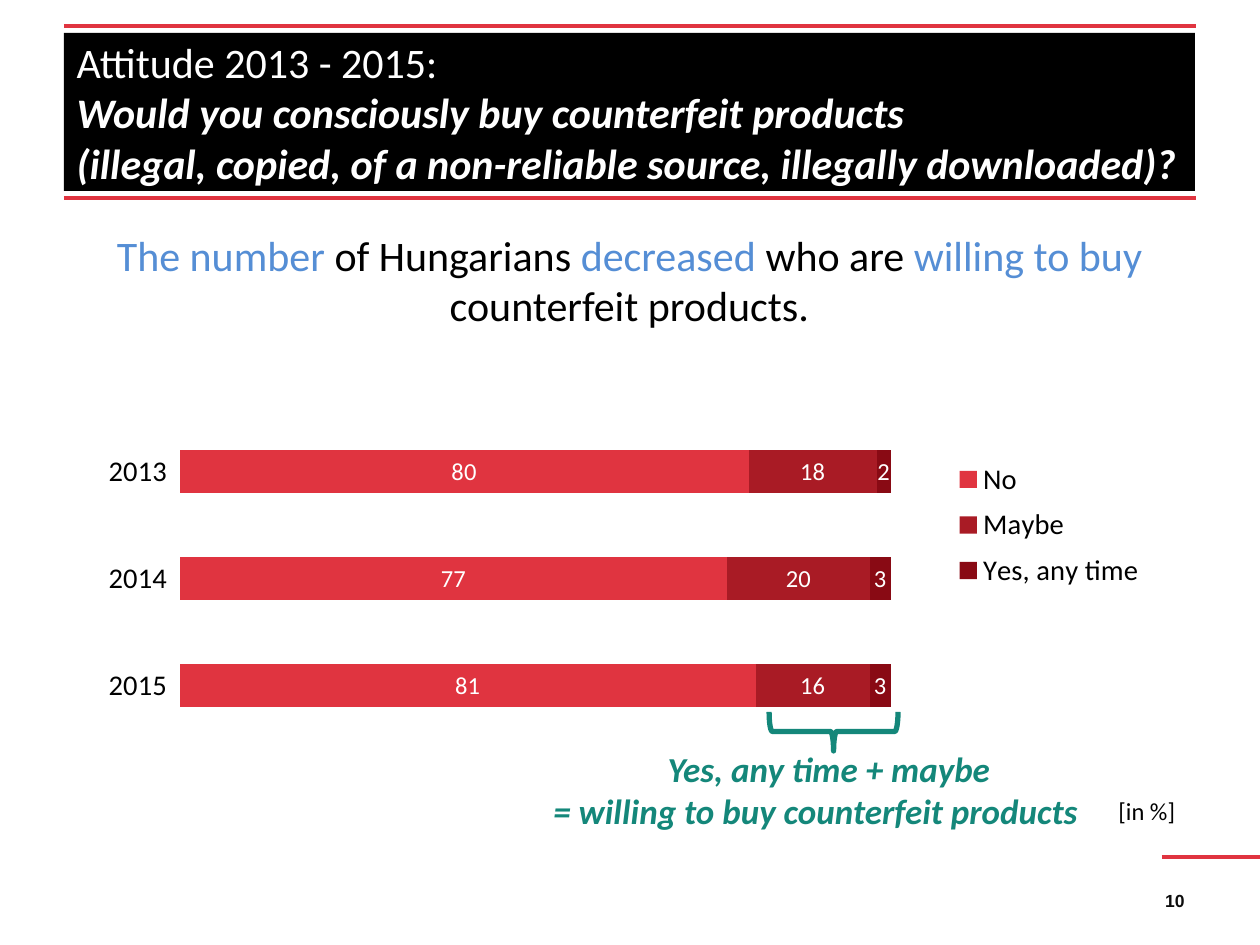
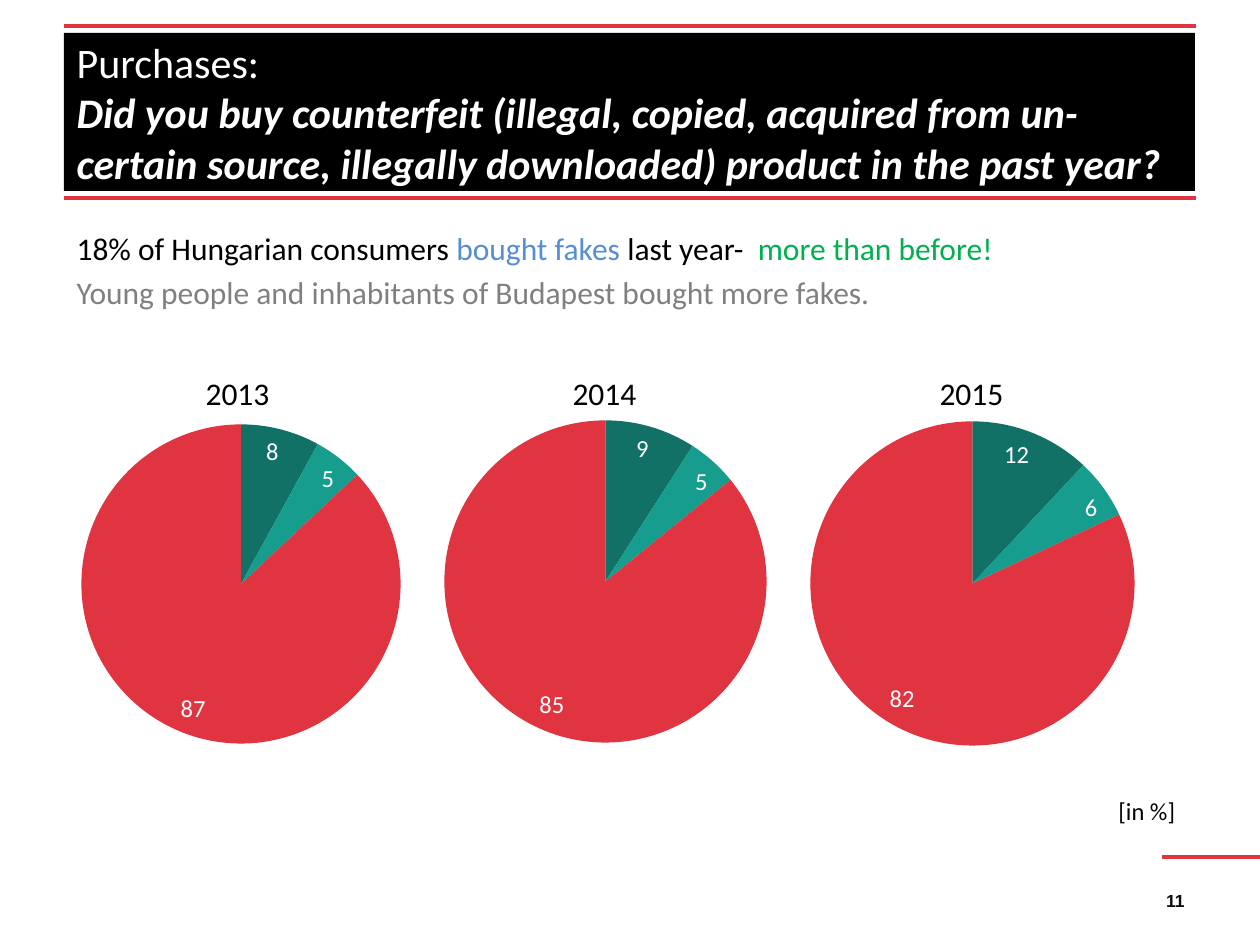
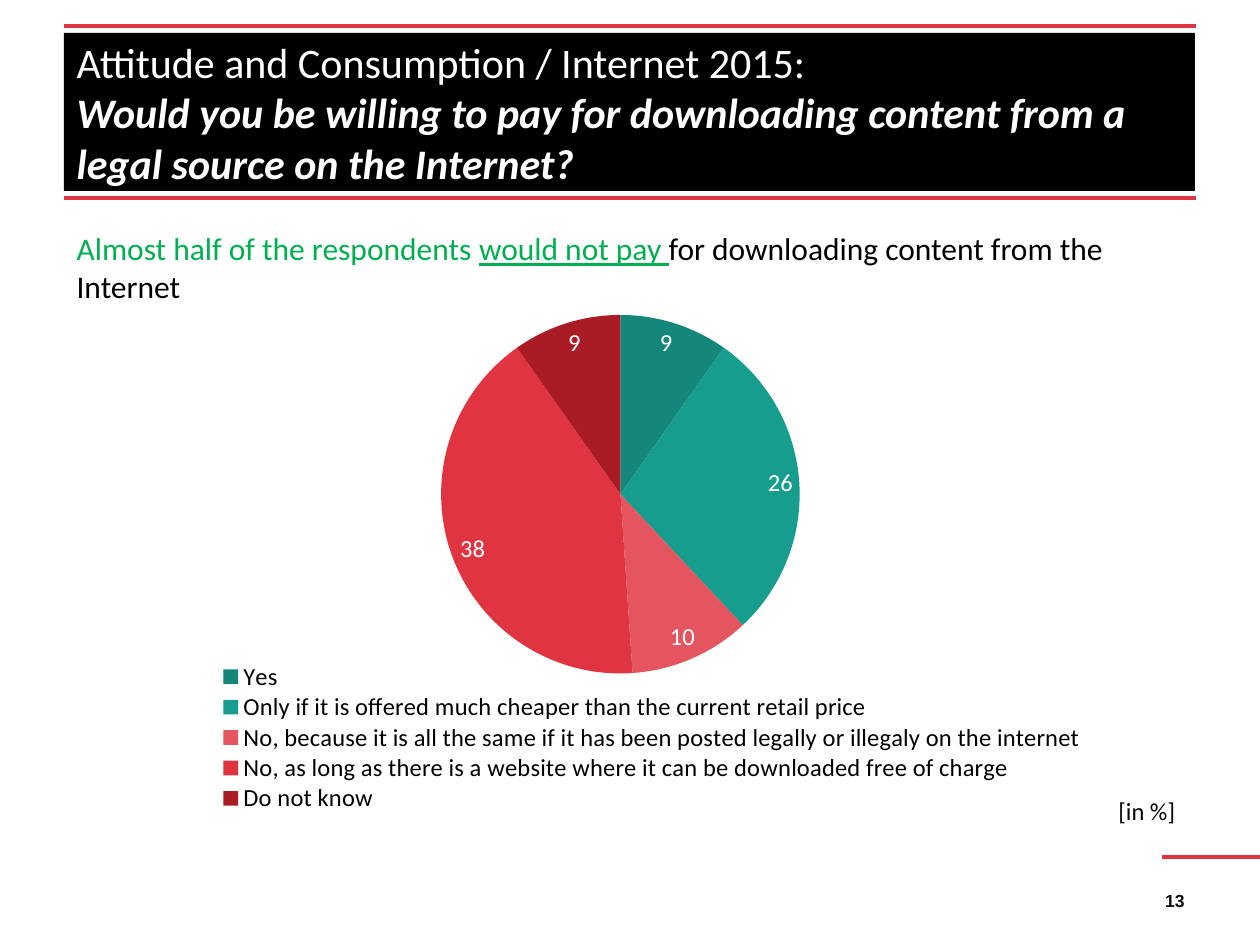
import copy
import lxml.etree
import pptx
import pptx.chart.data
import pptx.dml.color
import pptx.enum.chart
import pptx.enum.shapes
import pptx.enum.text
import pptx.oxml.ns
import pptx.util

SCALE = 914400 / 126
RED, DARK_RED, DEEP_RED, PINK = "E03440", "A91B25", "890A14", "E5555F"
TEAL, LIGHT_TEAL, DEEP_TEAL = "14877A", "179D8D", "117166"
BLACK, WHITE, INK, GREY = "000000", "FFFFFF", "0D0D0D", "808080"
BLUE, GREEN = "558ED5", "00B050"

ALIGN = pptx.enum.text.PP_ALIGN
ANCHOR = pptx.enum.text.MSO_ANCHOR
CHART = pptx.enum.chart.XL_CHART_TYPE
LABEL = pptx.enum.chart.XL_LABEL_POSITION
qn = pptx.oxml.ns.qn


def px(*values):
    return [pptx.util.Emu(round(v * SCALE)) for v in values]


def rgb(value):
    return pptx.dml.color.RGBColor.from_string(value)


def add_text(p, text, size=18, color=BLACK, font="Calibri", bold=False, italic=False, underline=False):
    for i, line in enumerate(text.split("\n")):
        if i:
            p.add_line_break()
            p._p[-1].append(copy.deepcopy(r._r.rPr))
        if not line:
            continue
        r = p.add_run()
        r.text = line
        r.font.name = font
        r.font.size = pptx.util.Pt(size)
        r.font.bold = bold
        r.font.italic = italic
        r.font.underline = underline
        r.font.color.rgb = rgb(color)


def set_layout(parent, index, box):
    old = parent.find(qn("c:layout"))
    if old is not None:
        parent.remove(old)
    layout = lxml.etree.Element(qn("c:layout"))
    manual = lxml.etree.SubElement(layout, qn("c:manualLayout"))
    items = [("xMode", "edge"), ("yMode", "edge"), *zip("xywh", box)]
    if parent.tag == qn("c:plotArea"):
        items.insert(0, ("layoutTarget", "inner"))
    for tag, value in items:
        lxml.etree.SubElement(manual, qn("c:" + tag)).set("val", str(value))
    parent.insert(index, layout)


class Deck:
    def __init__(self):
        self.prs = pptx.Presentation()
        self.prs.slide_width, self.prs.slide_height = px(1260, 945)
        self.s = None

    def new_slide(self, number, lead, question):
        self.s = self.prs.slides.add_slide(self.prs.slide_layouts[1])
        self.line(64, 26, 1196, 26, 2.25)
        self.line(64, 198, 1196, 198, 2.25)
        self.line(1162, 857, 1260, 857, 1.75)
        self.text((903, 876, 294, 50), str(number), align=ALIGN.RIGHT, anchor=ANCHOR.MIDDLE,
                  size=10, color=INK, font="Arial", bold=True)
        self.text((1106, 790, 120, 42), "[in %]", size=14)
        sp = self.s.shapes.title
        sp.fill.solid()
        sp.fill.fore_color.rgb = rgb(BLACK)
        p = self.frame(sp, (64, 33, 1131, 158), ANCHOR.MIDDLE).paragraphs[0]
        p.alignment = ALIGN.LEFT
        add_text(p, lead + "\n", size=24, color=WHITE)
        p.add_line_break()
        p._p[-1].append(copy.deepcopy(p.runs[0]._r.rPr))
        p._p.remove(p._p[-1])
        add_text(p, question, size=24, color=WHITE, bold=True, italic=True)

    def frame(self, sp, box, anchor):
        sp.left, sp.top, sp.width, sp.height = px(*box)
        tf = sp.text_frame
        tf.word_wrap = True
        tf.auto_size = pptx.enum.text.MSO_AUTO_SIZE.NONE
        tf.vertical_anchor = anchor
        return tf

    def body(self, height, paragraphs, size=18, align=ALIGN.LEFT):
        tf = self.frame(self.s.placeholders[1], (64, 223, 1131, height), ANCHOR.TOP)
        for i, runs in enumerate(paragraphs):
            p = tf.add_paragraph() if i else tf.paragraphs[0]
            pPr = p._p.get_or_add_pPr()
            pPr.set("marL", "0")
            pPr.set("indent", "0")
            lxml.etree.SubElement(pPr, qn("a:buNone"))
            p.alignment = align
            p.space_before = pptx.util.Pt(size * 0.2 if i else 0)
            for text, color, *underline in runs:
                add_text(p, text, size=size, color=color, underline=bool(underline))

    def text(self, box, *lines, align=ALIGN.LEFT, anchor=ANCHOR.TOP, **fmt):
        tf = self.frame(self.s.shapes.add_textbox(*px(*box)), box, anchor)
        for i, line in enumerate(lines):
            p = tf.add_paragraph() if i else tf.paragraphs[0]
            p.alignment = ALIGN.LEFT if i else align
            add_text(p, line, **fmt)

    def line(self, x1, y1, x2, y2, width):
        kind = pptx.enum.shapes.MSO_CONNECTOR.STRAIGHT
        sp = self.s.shapes.add_connector(kind, *px(x1, y1, x2, y2))
        sp.line.color.rgb = rgb(RED)
        sp.line.width = pptx.util.Pt(width)
        lxml.etree.SubElement(sp._element.spPr, qn("a:effectLst"))

    def brace(self, box):
        sp = self.s.shapes.add_shape(pptx.enum.shapes.MSO_SHAPE.RIGHT_BRACE, *px(*box))
        sp.rotation = 90
        sp.shadow.inherit = False
        sp.fill.background()
        sp.line.color.rgb = rgb(TEAL)
        sp.line.width = pptx.util.Pt(3)

    def chart(self, kind, box, cats, series, size=18, plot=None, legend=None, legend_size=None):
        data = pptx.chart.data.CategoryChartData()
        data.categories = cats
        for name, values in series:
            data.add_series(name, values)
        chart = self.s.shapes.add_chart(kind, *px(*box), data).chart
        chart.has_title = False
        chart.font.name = "Calibri"
        chart.font.size = pptx.util.Pt(size)
        chart.font.color.rgb = rgb(BLACK)
        chart.has_legend = legend is not None
        if legend:
            chart.legend.position = pptx.enum.chart.XL_LEGEND_POSITION.RIGHT
            chart.legend.include_in_layout = False
            chart.legend.font.size = pptx.util.Pt(legend_size or size)
            set_layout(chart.legend._element, 1, legend)
        if plot:
            set_layout(chart._chartSpace.find(".//" + qn("c:plotArea")), 0, plot)
        return chart

    def labels(self, series, position=None):
        labels = series.data_labels
        labels.show_value = True
        labels.font.size = pptx.util.Pt(14)
        labels.font.color.rgb = rgb(WHITE)
        if position is not None:
            labels.position = position

    def pie(self, box, cats, values, colors, position, **options):
        chart = self.chart(CHART.PIE, box, cats, [("Series 1", values)], **options)
        chart.plots[0].vary_by_categories = True
        series = chart.plots[0].series[0]
        for i, color in enumerate(colors):
            fill = series.points[i].format.fill
            fill.solid()
            fill.fore_color.rgb = rgb(color)
        self.labels(series, position)

    def stacked_bars(self, box, cats, series, colors, **options):
        chart = self.chart(CHART.BAR_STACKED, box, cats, series, **options)
        bars = chart.plots[0]
        bars.vary_by_categories = False
        bars.gap_width = 150
        bars.overlap = 100
        for item, color in zip(bars.series, colors):
            item.format.fill.solid()
            item.format.fill.fore_color.rgb = rgb(color)
            self.labels(item)
        chart.category_axis.format.line.fill.background()
        chart.category_axis.major_tick_mark = pptx.enum.chart.XL_TICK_MARK.CROSS
        axis = chart.value_axis
        axis.minimum_scale, axis.maximum_scale = 0, 100
        axis.has_major_gridlines = False
        axis.visible = False


def attitude(deck):
    deck.new_slide(10, "Attitude 2013 - 2015:",
                   "Would you consciously buy counterfeit products\n"
                   "(illegal, copied, of a non-reliable source, illegally downloaded)?")
    deck.body(115, [[("The number ", BLUE), ("of Hungarians ", BLACK), ("decreased ", BLUE),
                     ("who are ", BLACK), ("willing to buy ", BLUE),
                     ("counterfeit products.", BLACK)]], size=24, align=ALIGN.CENTER)
    deck.stacked_bars((54, 294, 1131, 525), ["2015", "2014", "2013", ""],
                      [("No", [81, 77, 80, None]), ("Maybe", [16, 20, 18, None]),
                       ("Yes, any time", [3, 3, 2, None])],
                      [RED, DARK_RED, DEEP_RED], size=16.3,
                      plot=(0.111, 0.033, 0.629, 0.815), legend=(0.79, 0.3, 0.18, 0.28))
    deck.text((541, 760, 576, 59), "Yes, any time + maybe", "= willing to buy counterfeit products",
              align=ALIGN.CENTER, anchor=ANCHOR.MIDDLE, size=20, color=TEAL, bold=True, italic=True)
    deck.brace((814, 667, 39, 129))


def purchases(deck):
    deck.new_slide(11, "Purchases:",
                   "Did you buy counterfeit (illegal, copied, acquired from un-certain source, "
                   "illegally downloaded) product in the past year?")
    deck.body(142, [[("18% of Hungarian consumers ", BLACK), ("bought fakes ", BLUE),
                     ("last year-  ", BLACK), ("more than before!", GREEN)],
                    [("Young people and inhabitants of Budapest bought more fakes.", GREY)]])
    years = [("2013", (62, 407, 358, 354), [8, 5, 87]),
             ("2014", (417, 403, 377, 357), [9, 5, 85]),
             ("2015", (779, 404, 387, 359), [12, 6, 82])]
    for i, (year, box, values) in enumerate(years):
        deck.pie(box, ["1", "2", "3"], values, [DEEP_TEAL, LIGHT_TEAL, RED], LABEL.INSIDE_END)
        deck.text((54 + 367 * i, 358, 367, 69), year, align=ALIGN.CENTER, anchor=ANCHOR.MIDDLE)


def internet(deck):
    deck.new_slide(13, "Attitude and Consumption / Internet 2015:",
                   "Would you be willing to pay for downloading content from a legal source "
                   "on the Internet?")
    deck.body(89, [[("Almost half of the respondents ", GREEN), ("would not pay ", GREEN, True),
                    ("for downloading content from the Internet", BLACK)]])
    answers = ["Yes",
               "Only if it is offered much cheaper than the current retail price",
               "No, because it is all the same if it has been posted legally or illegaly on the internet",
               "No, as long as there is a website where it can be downloaded free of charge",
               "Do not know"]
    deck.pie((64, 294, 1131, 525), answers, [9, 26, 10, 38, 9],
             [TEAL, LIGHT_TEAL, PINK, RED, DARK_RED], LABEL.BEST_FIT,
             plot=(0.333, 0.04, 0.318, 0.683), legend=(0.13, 0.7, 0.78, 0.29), legend_size=14)


def main():
    deck = Deck()
    for build in (attitude, purchases, internet):
        build(deck)
    deck.prs.save("out.pptx")


if __name__ == "__main__":
    main()
